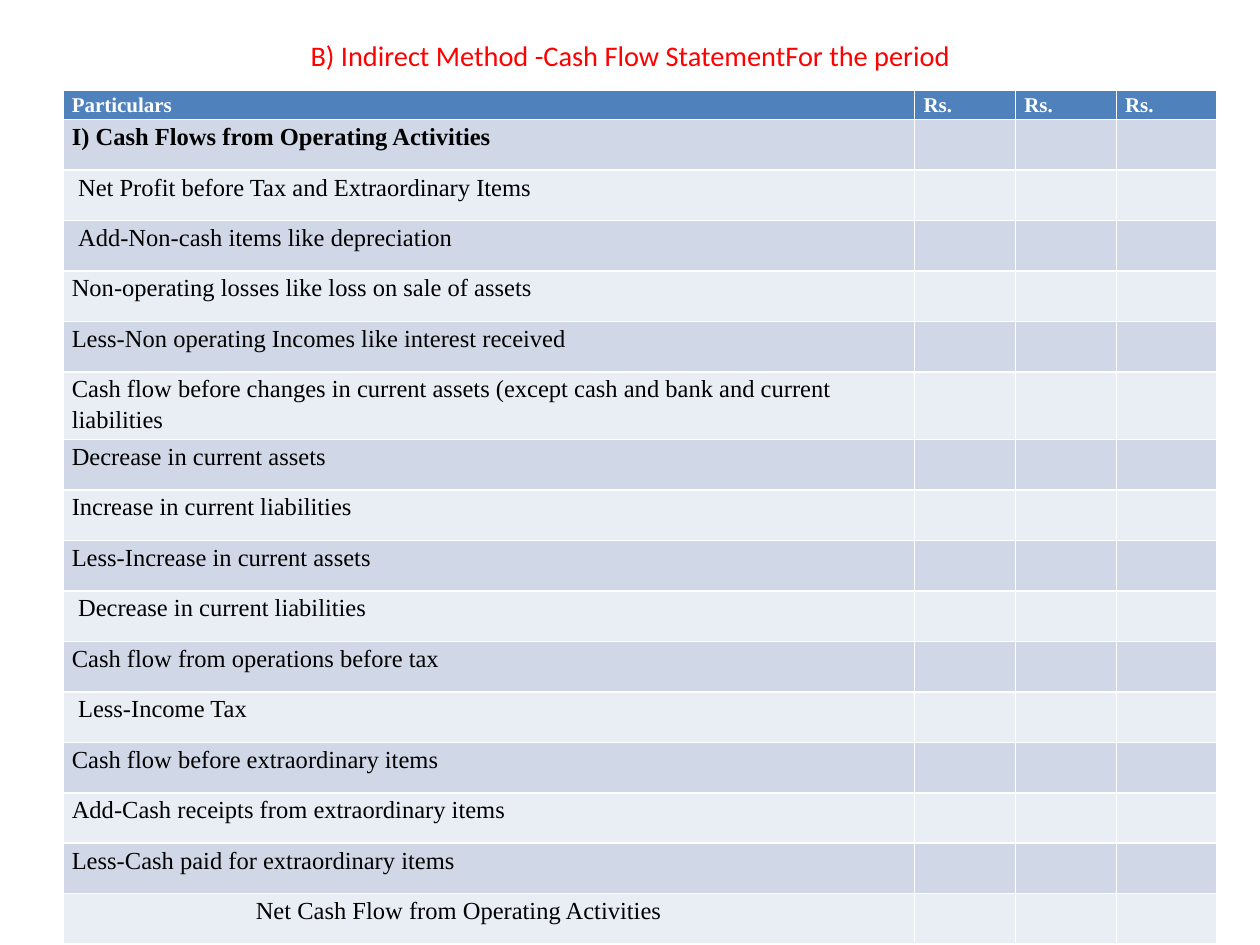
from dataclasses import dataclass

from pptx import Presentation
from pptx.dml.color import RGBColor
from pptx.enum.text import MSO_ANCHOR, PP_ALIGN
from pptx.util import Inches, Pt

CENTER = PP_ALIGN.CENTER
MIDDLE = MSO_ANCHOR.MIDDLE


@dataclass(frozen=True)
class Theme:
    title_font: str = "Calibri"
    table_font: str = "Times New Roman"
    title_size: float = 16.2
    header_size: int = 12
    body_size: int = 14
    title: RGBColor = RGBColor.from_string("FF0000")
    header_text: RGBColor = RGBColor.from_string("FFFFFF")
    body_text: RGBColor = RGBColor.from_string("000000")
    header_fill: RGBColor = RGBColor.from_string("4F81BD")
    odd_fill: RGBColor = RGBColor.from_string("D0D8E8")
    even_fill: RGBColor = RGBColor.from_string("E9EDF4")


theme = Theme()


def style_text(para, font, size, color, bold=False):
    for span in para.runs:
        span.font.name = font
        span.font.size = Pt(size)
        span.font.color.rgb = color
        span.font.bold = bold


def fill_cell(cell, text, size, color, bold, indent=0):
    cell.margin_left = Inches(0.07 + indent)
    cell.margin_right = Inches(0.07)
    cell.margin_top = cell.margin_bottom = 0
    cell.text_frame.text = text
    para = cell.text_frame.paragraphs[0]
    para.line_spacing = 1.15
    style_text(para, theme.table_font, size, color, bold)


HEADERS = ["Particulars", "Rs.", "Rs.", "Rs."]
COLUMN_WIDTHS = [6.76, 0.8, 0.8, 0.8]
ROW_HEIGHT = 0.38
SMALL_INDENT = 0.05
TOTAL_INDENT = 1.46
ITEMS = [
    ("I) Cash Flows from Operating Activities", 0),
    ("Net Profit before Tax and Extraordinary Items", SMALL_INDENT),
    ("Add-Non-cash items like depreciation", SMALL_INDENT),
    ("Non-operating losses like loss on sale of assets", 0),
    ("Less-Non operating Incomes like interest received", 0),
    ("Cash flow before changes in current assets (except cash and bank and current liabilities", 0),
    ("Decrease in current assets", 0),
    ("Increase in current liabilities", 0),
    ("Less-Increase in current assets", 0),
    ("Decrease in current liabilities", SMALL_INDENT),
    ("Cash flow from operations before tax", 0),
    ("Less-Income Tax", SMALL_INDENT),
    ("Cash flow before extraordinary items", 0),
    ("Add-Cash receipts from extraordinary items", 0),
    ("Less-Cash paid for extraordinary items", 0),
    ("Net Cash Flow from Operating Activities", TOTAL_INDENT),
]
TALL_ROWS = {0: 0.22, 6: 0.51}

deck = Presentation()
deck.slide_width = Inches(10)
deck.slide_height = Inches(7.5)
page = deck.slides.add_slide(deck.slide_layouts[6])

title_box = page.shapes.add_textbox(Inches(0.5), Inches(0.3), Inches(9), Inches(0.28))
title_frame = title_box.text_frame
title_frame.word_wrap = True
title_frame.vertical_anchor = MIDDLE
title_frame.margin_top = title_frame.margin_bottom = 0
title_frame.text = "B) Indirect Method -Cash Flow StatementFor the period"
title_para = title_frame.paragraphs[0]
title_para.alignment = CENTER
style_text(title_para, theme.title_font, theme.title_size, theme.title)

row_heights = [TALL_ROWS.get(index, ROW_HEIGHT) for index in range(len(ITEMS) + 1)]
statement = page.shapes.add_table(
    len(row_heights), len(HEADERS), Inches(0.5), Inches(0.72),
    Inches(sum(COLUMN_WIDTHS)), Inches(sum(row_heights)),
).table
for column, width in zip(statement.columns, COLUMN_WIDTHS):
    column.width = Inches(width)

for index, (row, height) in enumerate(zip(statement.rows, row_heights)):
    row.height = Inches(height)
    band = theme.odd_fill if index % 2 else theme.even_fill
    for cell in row.cells:
        cell.fill.solid()
        cell.fill.fore_color.rgb = band if index else theme.header_fill

for column, label in enumerate(HEADERS):
    fill_cell(statement.cell(0, column), label, theme.header_size, theme.header_text, True)

for index, (label, indent) in enumerate(ITEMS, start=1):
    fill_cell(statement.cell(index, 0), label, theme.body_size, theme.body_text, index == 1, indent)

deck.save("out.pptx")
